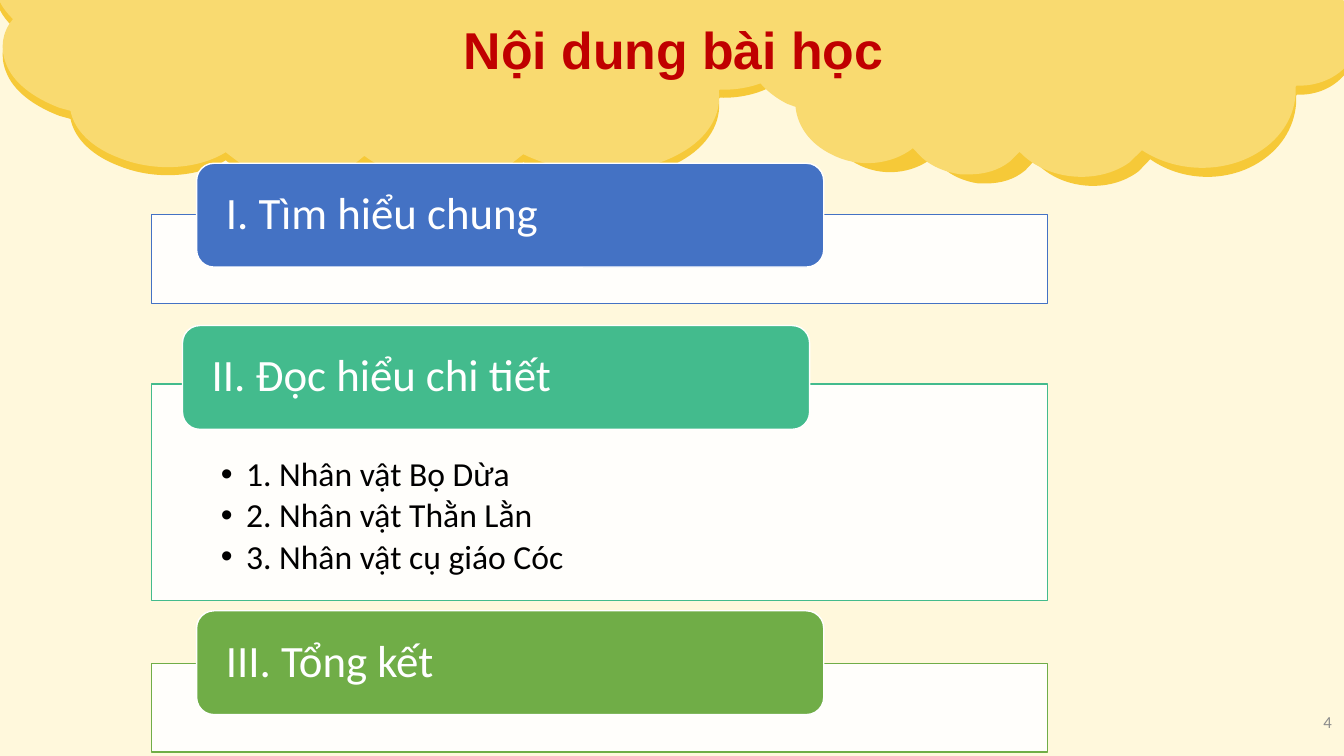
from lxml import etree
from pptx import Presentation
from pptx.dml.color import RGBColor
from pptx.enum.shapes import MSO_SHAPE
from pptx.enum.text import MSO_ANCHOR, MSO_AUTO_SIZE, PP_ALIGN
from pptx.oxml.ns import qn
from pptx.util import Inches, Pt

COLORS = {
    "cream": "FFF8DC", "cloud_shade": "F6C938", "cloud": "F9DA70",
    "title": "C00000", "number": "8C8C8C", "white": "FFFFFF", "black": "000000",
    "blue": "4472C4", "teal": "43BB8D", "green": "70AD47",
}

# Cloud outline: one point is a straight step, three points are a Bézier curve.
CLOUD = [
    [(-0.04, 0.01)], [(7.58, 0.01)], [(7.55, 0.04)],
    [(7.81, 0.17), (7.95, 0.38), (7.89, 0.58)],
    [(7.83, 0.82), (7.51, 0.98), (7.14, 0.97)], [(7.13, 0.98)],
    [(7.16, 1.22), (7.02, 1.45), (6.75, 1.6)],
    [(6.33, 1.84), (5.68, 1.85), (5.19, 1.61)], [(5.04, 1.73)],
    [(4.66, 1.95), (4, 1.92), (3.62, 1.63)], [(3.61, 1.63)], [(3.5, 1.72)],
    [(3.36, 1.81), (3.18, 1.85), (2.98, 1.85)],
    [(2.95, 1.85), (2.91, 1.85), (2.87, 1.85)],
    [(2.69, 1.83), (2.51, 1.78), (2.37, 1.69)], [(2.25, 1.6)], [(2.24, 1.59)],
    [(1.97, 1.76), (1.54, 1.79), (1.19, 1.65)],
    [(0.92, 1.55), (0.74, 1.38), (0.7, 1.18)], [(0.59, 1.15)],
    [(0.33, 1.05), (0.13, 0.9), (0.06, 0.71)],
    [(0, 0.56), (0.02, 0.4), (0.13, 0.27)],
    [(0.07, 0.21), (0.03, 0.16), (0, 0.1)],
]


def write(paragraph, text, size, color, spacing=0.9, **font_format):
    paragraph.text = text
    paragraph.line_spacing = spacing
    paragraph.space_before = Pt(0)
    font = paragraph.font
    font.color.rgb = RGBColor.from_string(COLORS[color])
    for attribute, value in {"name": "Calibri", "size": Pt(size), **font_format}.items():
        setattr(font, attribute, value)


def frame_text(frame, anchor, left, top, right, bottom):
    """Set anchor and insets, with wrapping on and autofit off."""
    settings = {
        "word_wrap": True, "auto_size": MSO_AUTO_SIZE.NONE, "vertical_anchor": anchor,
        "margin_left": Inches(left), "margin_top": Inches(top),
        "margin_right": Inches(right), "margin_bottom": Inches(bottom),
    }
    for attribute, value in settings.items():
        setattr(frame, attribute, value)


presentation = Presentation()
presentation.slide_width, presentation.slide_height = Inches(13.33), Inches(7.5)
slide = presentation.slides.add_slide(presentation.slide_layouts[1])
slide.background.fill.solid()
slide.background.fill.fore_color.rgb = RGBColor.from_string(COLORS["cream"])
shapes = slide.shapes
heading, topics = slide.placeholders

# Clouds, each the outline stretched, slanted and shifted, behind the placeholders
clouds = [  # colour, left, stretch, slant, drop
    ("cloud_shade", 0, 1, 0, 0),
    ("cloud", 0, 1, 0, -0.08),
    ("cloud_shade", 7.7, 0.73, -0.05, -0.03),
    ("cloud", 7.41, 0.77, -0.05, -0.12),
]
for layer, (color, left, stretch, slant, drop) in enumerate(clouds):
    steps = [[(Inches(left + stretch * x + slant * y), Inches(y + drop)) for x, y in step]
             for step in CLOUD]
    corners = [step[-1] for step in steps]
    builder = shapes.build_freeform(*corners[0])
    builder.add_line_segments(corners[1:], close=True)
    cloud = builder.convert_to_shape()
    # Bend the straight segments that stand for curves
    segments = list(cloud._element.iter(qn("a:lnTo")))
    for step, segment in zip(steps[1:], segments):
        if len(step) == 3:
            segment.tag = qn("a:cubicBezTo")
            for place, (x, y) in enumerate(step[:2]):
                control = etree.Element(qn("a:pt"), x=str(x - cloud.left), y=str(y - cloud.top))
                segment.insert(place, control)
    cloud.shadow.inherit = False
    cloud.fill.solid()
    cloud.fill.fore_color.rgb = RGBColor.from_string(COLORS[color])
    cloud.line.fill.background()
    shapes._spTree.insert(2 + layer, cloud._element)

heading.left, heading.top = Inches(4.47), Inches(0)
heading.width, heading.height = Inches(8.52), Inches(0.93)
frame_text(heading.text_frame, MSO_ANCHOR.BOTTOM, 0.13, 0.13, 0.13, 0.13)
title_line = heading.text_frame.paragraphs[0]
write(title_line, "Nội dung bài học", 37, "title", name="Arial", bold=True)
title_line.alignment = PP_ALIGN.LEFT

page_number = shapes.add_textbox(Inches(12.65), Inches(6.93), Inches(0.69), Inches(0.57))
frame_text(page_number.text_frame, MSO_ANCHOR.TOP, 0.13, 0.13, 0.13, 0.13)
number_line = page_number.text_frame.paragraphs[0]
write(number_line, "4", 12, "number", spacing=1.0)
number_line.alignment = PP_ALIGN.RIGHT

# Lesson sections: a pale panel with a coloured tab over its top edge
sections = [  # label, colour, panel top, panel height, tab left, tab top, topics
    ("I. Tìm hiểu chung", "blue", 2.13, 0.88, 1.95, 1.62, []),
    ("II. Đọc hiểu chi tiết", "teal", 3.81, 2.15, 1.81, 3.23,
     ["1. Nhân vật Bọ Dừa", "2. Nhân vật Thằn Lằn", "3. Nhân vật cụ giáo Cóc"]),
    ("III. Tổng kết", "green", 6.58, 0.88, 1.95, 6.06, []),
]
for label, color, panel_top, panel_height, tab_left, tab_top, entries in sections:
    place = Inches(1.5), Inches(panel_top), Inches(8.89), Inches(panel_height)
    if entries:
        panel = topics
        panel.left, panel.top, panel.width, panel.height = place
        frame_text(panel.text_frame, MSO_ANCHOR.TOP, 0.69, 0.73, 0.69, 0.19)
    else:
        panel = shapes.add_shape(MSO_SHAPE.RECTANGLE, *place)
        panel.shadow.inherit = False
    tab = shapes.add_shape(MSO_SHAPE.ROUNDED_RECTANGLE, Inches(tab_left), Inches(tab_top),
                           Inches(6.22), Inches(1.03))
    tab.shadow.inherit = False
    for part, fill, line in ((panel, "white", color), (tab, color, "white")):
        part.fill.solid()
        part.fill.fore_color.rgb = RGBColor.from_string(COLORS[fill])
        part.line.color.rgb = RGBColor.from_string(COLORS[line])
        part.line.width = Pt(1)
    panel_color = panel._element.spPr.find(qn("a:solidFill"))[0]
    etree.SubElement(panel_color, qn("a:alpha"), val="90000")

    frame_text(tab.text_frame, MSO_ANCHOR.MIDDLE, 0.24, 0, 0.24, 0)
    tab_line = tab.text_frame.paragraphs[0]
    write(tab_line, label, 32, "white")
    tab_line.alignment = PP_ALIGN.LEFT

    for i, entry in enumerate(entries):
        frame = panel.text_frame
        topic = frame.add_paragraph() if i else frame.paragraphs[0]
        properties = topic._p.get_or_add_pPr()
        properties.set("marL", str(Inches(0.25)))
        properties.set("indent", str(-Inches(0.25)))
        etree.SubElement(properties, qn("a:buFont"), typeface="Arial")
        etree.SubElement(properties, qn("a:buChar"), char="•")
        write(topic, entry, 24, "black")
        topic.space_after = Pt(3.6)

presentation.save("out.pptx")
